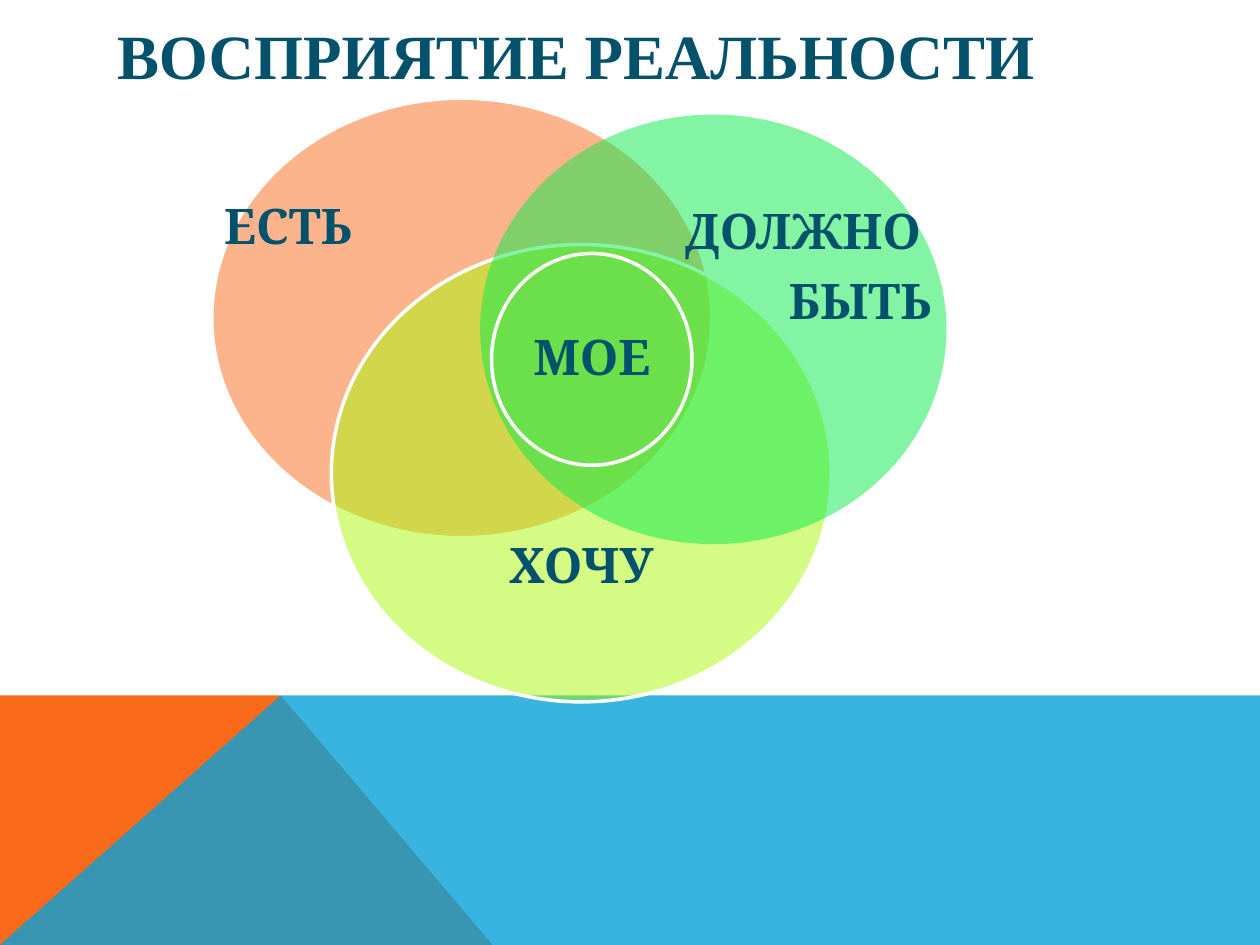
from dataclasses import dataclass

from lxml.etree import SubElement
from pptx import Presentation
from pptx.dml.color import RGBColor
from pptx.enum.shapes import MSO_SHAPE
from pptx.enum.text import MSO_ANCHOR, PP_ALIGN
from pptx.oxml.ns import qn
from pptx.util import Cm, Pt


@dataclass(frozen=True)
class Theme:
    ink: str = "04516C"
    orange: str = "F96A1B"
    blue: str = "08A1D9"
    lime: str = "ABF80B"
    green: str = "08EA4B"
    white: str = "FFFFFF"
    title_font: str = "Times New Roman"
    label_font: str = "Cambria"
    title_size: int = 36
    label_size: int = 28
    line_width: int = 2


theme = Theme()


def paint(shape, fill=None, opacity=100, line=None):
    shape.shadow.inherit = False
    if fill:
        shape.fill.solid()
        shape.fill.fore_color.rgb = RGBColor.from_string(fill)
        color = shape.fill._xPr.find(qn("a:solidFill"))[0]
        SubElement(color, qn("a:alpha"), val=str(opacity * 1000))
    else:
        shape.fill.background()
    if line:
        shape.line.color.rgb = RGBColor.from_string(line)
        shape.line.width = Pt(theme.line_width)
    else:
        shape.line.fill.background()


def write(page, text, *, area, font, size, align=PP_ALIGN.LEFT,
          spacing=1.0, after=0, side=0.25, top=0.13, bottom=0.13):
    box = page.shapes.add_textbox(*map(Cm, area))
    frame = box.text_frame
    frame.word_wrap = True
    frame.vertical_anchor = MSO_ANCHOR.MIDDLE
    frame.margin_left = frame.margin_right = Cm(side)
    frame.margin_top, frame.margin_bottom = Cm(top), Cm(bottom)
    for index, line in enumerate(text.split("\n")):
        para = frame.paragraphs[0] if index == 0 else frame.add_paragraph()
        para.alignment = align
        para.line_spacing = spacing
        para.space_after = Pt(after)
        span = para.add_run()
        span.text = line
        span.font.name = font
        span.font.size = Pt(size)
        span.font.bold = True
        span.font.color.rgb = RGBColor.from_string(theme.ink)


deck = Presentation()
deck.slide_width, deck.slide_height = Cm(25.4), Cm(19.05)
page = deck.slides.add_slide(deck.slide_layouts[6])

band_top, band_bottom, peak = 14.02, 19.05, 5.66
bands = [
    ([(0, band_bottom), (0, band_top), (peak, band_top), (9.93, band_bottom)],
     theme.orange, 100),
    ([(0, band_bottom), (peak, band_top), (25.4, band_top), (25.4, band_bottom)],
     theme.blue, 80),
]
for points, color, opacity in bands:
    corners = [(Cm(x), Cm(y)) for x, y in points]
    outline = page.shapes.build_freeform(*corners[0])
    outline.add_line_segments(corners[1:], close=True)
    paint(outline.convert_to_shape(), color, opacity)

write(page, "ВОСПРИЯТИЕ РЕАЛЬНОСТИ", area=(2.11, 0.33, 20.88, 1.52),
      font=theme.title_font, size=theme.title_size)

circles = [
    ("ЕСТЬ", (4.27, 1.98, 10.08, 8.86), theme.orange, theme.white,
     dict(bottom=3.6, top=0)),
    ("ХОЧУ", (6.68, 4.93, 10.08, 9.22), theme.lime, theme.white,
     dict(align=PP_ALIGN.CENTER, top=3.8, bottom=0)),
    ("ДОЛЖНО \nБЫТЬ", (9.68, 2.31, 9.4, 8.66), theme.green, None,
     dict(align=PP_ALIGN.RIGHT, side=0.3, bottom=2.45, top=0)),
    ("МОЕ", (9.91, 5.11, 4.04, 4.27), None, theme.white,
     dict(align=PP_ALIGN.CENTER, side=0.3)),
]
for text, area, color, line, placing in circles:
    circle = page.shapes.add_shape(MSO_SHAPE.OVAL, *map(Cm, area))
    paint(circle, color, 50, line)
    write(page, text, area=area, font=theme.label_font,
          size=theme.label_size, spacing=0.9, after=10, **placing)

deck.save("out.pptx")
